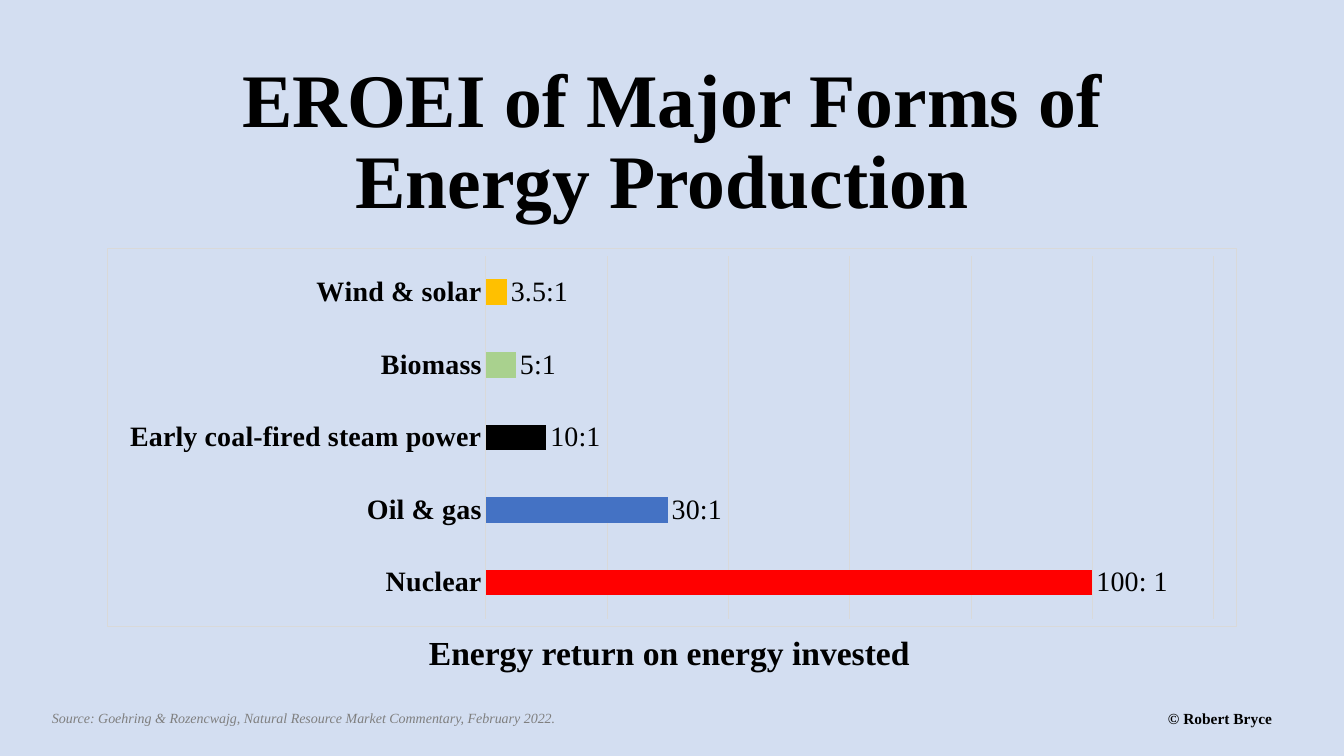
import pptx
import pptx.chart.data
import pptx.dml.color
import pptx.enum.chart
import pptx.enum.text
import pptx.util
import lxml.etree
from dataclasses import dataclass


@dataclass(frozen=True)
class Theme:
    """Colours, font and type sizes of the slide."""
    background: str = "D3DEF1"
    ink: str = "000000"
    muted: str = "7F7F7F"
    rule: str = "D9D9D9"
    bar: str = "4472C4"
    font: str = "Times New Roman"
    title: int = 54
    caption: int = 24
    label: int = 20
    credit: int = 11
    source: int = 10


THEME = Theme()
ENERGY = [
    ("Nuclear", 100, "100: 1", "FF0000"),
    ("Oil & gas", 30, "30:1", THEME.bar),
    ("Early coal-fired steam power", 10, "10:1", "000000"),
    ("Biomass", 5, "5:1", "A9D18E"),
    ("Wind & solar", 3.5, "3.5:1", "FFC000"),
]


def px(n):
    """Turn pixels into EMU."""
    return pptx.util.Emu(round(n * 914400 / 100.8))


def rgb(code):
    """Turn a hex code into a colour."""
    return pptx.dml.color.RGBColor.from_string(code)


def style(font, size, color=THEME.ink, bold=False, italic=False):
    """Set the look of a font."""
    font.name, font.size = THEME.font, pptx.util.Pt(size)
    font.bold, font.italic = bold, italic
    font.color.rgb = rgb(color)


def rule(line):
    """Draw a thin grey line."""
    line.color.rgb = rgb(THEME.rule)
    line.width = pptx.util.Pt(0.75)


def add_text(s, box, text, size, wrap=True, **look):
    """Place one line of styled text in a box and return its frame."""
    tf = s.shapes.add_textbox(*map(px, box)).text_frame
    tf.word_wrap = wrap
    r = tf.paragraphs[0].add_run()
    r.text = text
    style(r.font, size, **look)
    return tf


def add_title(s, box):
    """Place the centred title."""
    tf = add_text(s, box, "EROEI of Major Forms of Energy Production ",
                  THEME.title, bold=True)
    tf.vertical_anchor = pptx.enum.text.MSO_ANCHOR.MIDDLE
    p = tf.paragraphs[0]
    p.alignment = pptx.enum.text.PP_ALIGN.CENTER
    p.line_spacing = 0.9


def add_border(chart):
    """Give the chart area a thin grey border and no fill."""
    ns = "http://schemas.openxmlformats.org/drawingml/2006/"
    border = lxml.etree.fromstring(
        f'<c:spPr xmlns:c="{ns}chart" xmlns:a="{ns}main"><a:noFill/>'
        f'<a:ln w="9525"><a:solidFill><a:srgbClr val="{THEME.rule}"/>'
        '</a:solidFill></a:ln></c:spPr>')
    chart.element.find(f"{{{ns}chart}}chart").addnext(border)


def add_energy_chart(s, box):
    """Place the bar chart of energy returns."""
    data = pptx.chart.data.CategoryChartData()
    data.categories = [name for name, *_ in ENERGY]
    data.add_series("Series 1", [value for _, value, *_ in ENERGY])
    chart = s.shapes.add_chart(
        pptx.enum.chart.XL_CHART_TYPE.BAR_CLUSTERED, *map(px, box), data).chart
    chart.has_legend = chart.has_title = False
    style(chart.font, THEME.label)
    add_border(chart)

    axis = chart.category_axis
    axis.major_tick_mark = pptx.enum.chart.XL_TICK_MARK.NONE
    style(axis.tick_labels.font, THEME.label, bold=True)
    rule(axis.format.line)
    values = chart.value_axis
    values.visible = False
    values.minimum_scale, values.maximum_scale, values.major_unit = 0, 120, 20
    values.has_major_gridlines = True
    rule(values.major_gridlines.format.line)

    plot = chart.plots[0]
    plot.gap_width, plot.vary_by_categories = 182, False
    series = plot.series[0]
    series.format.fill.solid()
    series.format.fill.fore_color.rgb = rgb(THEME.bar)
    for i, (_, _, ratio, color) in enumerate(ENERGY):
        point = series.points[i]
        point.format.fill.solid()
        point.format.fill.fore_color.rgb = rgb(color)
        label = point.data_label
        r = label.text_frame.paragraphs[0].add_run()
        r.text = ratio
        style(r.font, THEME.label)
        label.position = pptx.enum.chart.XL_LABEL_POSITION.OUTSIDE_END


def add_footer(s, box):
    """Place the source at the left and the credit at the right."""
    x, y, w, h = box
    credit_w = 172
    add_text(s, (x, y, 529, h),
             "Source: Goehring & Rozencwajg, Natural Resource Market "
             "Commentary, February 2022.",
             THEME.source, wrap=False, color=THEME.muted, italic=True)
    add_text(s, (x + w - credit_w, y - 1, credit_w, h),
             "© Robert Bryce", THEME.credit, bold=True)


def main():
    """Build the slide and save it."""
    prs = pptx.Presentation()
    prs.slide_width, prs.slide_height = px(1344), px(756)
    s = prs.slides.add_slide(prs.slide_layouts[6])
    s.background.fill.solid()
    s.background.fill.fore_color.rgb = rgb(THEME.background)
    add_title(s, (107, 82, 1130, 123))
    add_energy_chart(s, (107, 248, 1130, 379))
    add_text(s, (419, 627, 506, 50), "Energy return on energy invested",
             THEME.caption, wrap=False, bold=True)
    add_footer(s, (42, 705, 1288, 27))
    prs.save("out.pptx")


if __name__ == "__main__":
    main()
